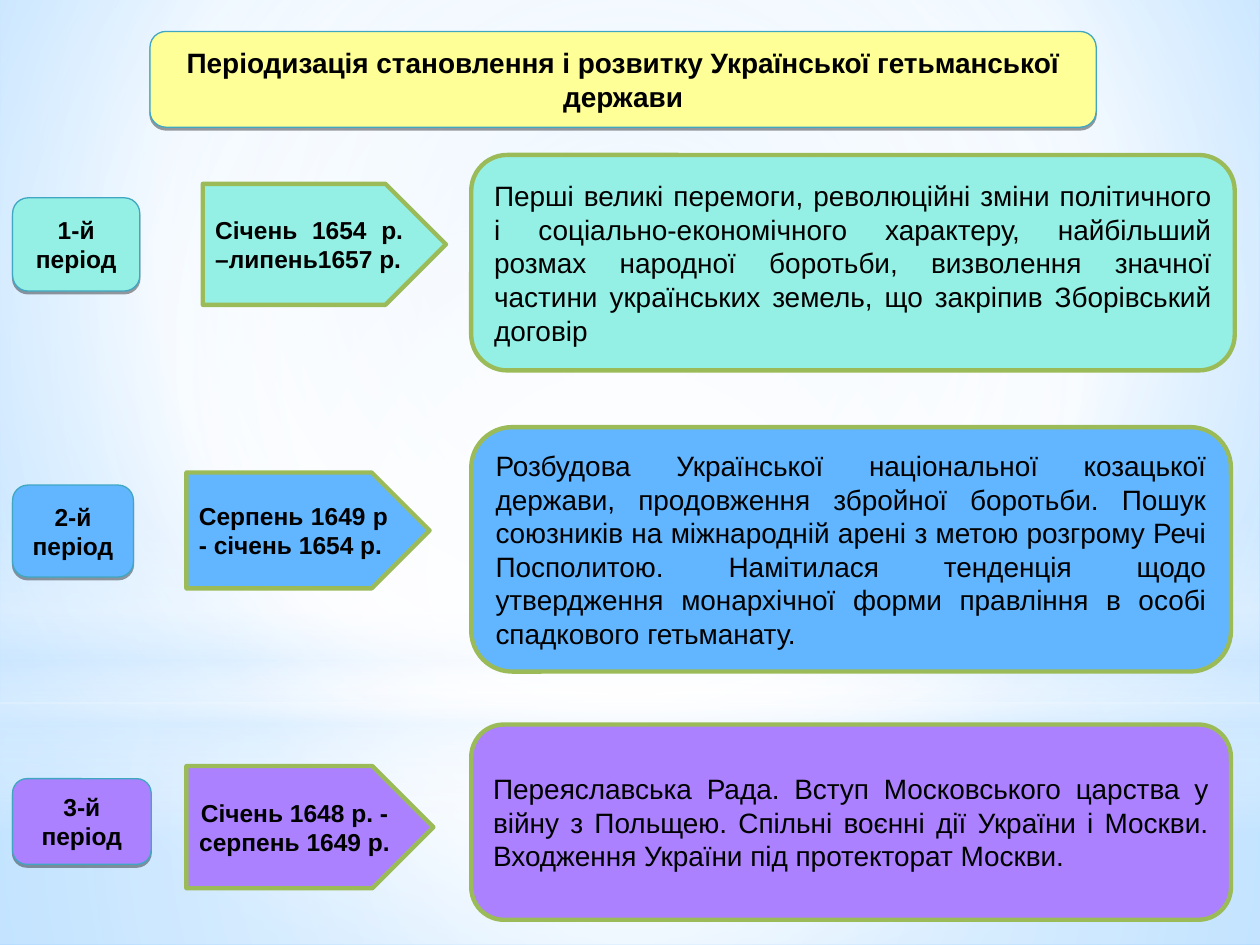
from lxml import etree
from pptx import Presentation
from pptx.dml.color import RGBColor
from pptx.enum.shapes import MSO_SHAPE
from pptx.enum.text import MSO_ANCHOR, PP_ALIGN
from pptx.oxml.ns import qn
from pptx.util import Inches, Pt

RECT, ELLIPSE = MSO_SHAPE.RECTANGLE, MSO_SHAPE.OVAL
ROUNDED, PENTAGON = MSO_SHAPE.ROUNDED_RECTANGLE, MSO_SHAPE.PENTAGON
CENTER, JUSTIFY = PP_ALIGN.CENTER, PP_ALIGN.JUSTIFY
MIDDLE = MSO_ANCHOR.MIDDLE

MINT, BLUE, VIOLET, YELLOW = "94F0E4", "61B6FF", "AB81FF", "FFFF97"
TEAL, OLIVE, BLACK = "40A7C2", "9BBB59", "000000"
WHITE, PALE = "FFFFFF", "D6ECFF"
MIDPOINT = (50, 50, 50, 50)


def color(hex_text):
    return RGBColor.from_string(hex_text)


def add_xml(parent, tag, **attributes):
    return etree.SubElement(parent, qn(tag), {k: str(v) for k, v in attributes.items()})


def add_xml_color(parent, hex_text, opacity):
    add_xml(add_xml(parent, "a:srgbClr", val=hex_text), "a:alpha", val=opacity * 1000)


def set_gradient(element, stops, focus=None):
    """Turn the first solid fill into a circular gradient, or a vertical one without focus."""
    solid = element.find(".//" + qn("a:solidFill"))
    gradient = etree.Element(qn("a:gradFill"), rotWithShape="1")
    stop_list = add_xml(gradient, "a:gsLst")
    for position, hex_text, opacity in stops:
        add_xml_color(add_xml(stop_list, "a:gs", pos=position * 1000), hex_text, opacity)
    if focus:
        circle = add_xml(gradient, "a:path", path="circle")
        sides = {side: share * 1000 for side, share in zip("ltrb", focus)}
        add_xml(circle, "a:fillToRect", **sides)
    else:
        add_xml(gradient, "a:lin", ang=90 * 60000, scaled=0)
    solid.getparent().replace(solid, gradient)


class PeriodSlide:
    font = "Arial"

    def __init__(self, slide):
        self.slide = slide

    def background(self, stops, focus):
        self.slide.background.fill.solid()
        set_gradient(self.slide.element, stops, focus)

    def shape(self, kind, box, fill):
        shape = self.slide.shapes.add_shape(kind, *map(Inches, box))
        shape.shadow.inherit = False
        shape.fill.solid()
        shape.fill.fore_color.rgb = color(fill)
        shape.line.fill.background()
        return shape

    def glow(self, kind, box, stops, focus=None):
        set_gradient(self.shape(kind, box, WHITE).element, stops, focus)

    def panel(self, kind, box, fill, line, width, paragraphs, size, bold, align):
        panel = self.shape(kind, box, fill)
        panel.line.color.rgb = color(line)
        panel.line.width = Pt(width)
        frame = panel.text_frame
        frame.word_wrap = True
        frame.vertical_anchor = MIDDLE
        for index, text in enumerate(paragraphs):
            paragraph = frame.add_paragraph() if index else frame.paragraphs[0]
            paragraph.alignment = align
            run = paragraph.add_run()
            run.text = text
            run.font.name = self.font
            run.font.size = Pt(size)
            run.font.bold = bold
            run.font.color.rgb = color(BLACK)
        return panel

    def label(self, box, fill, paragraphs, size=14):
        """Bold rounded label with a hard shadow below it."""
        label = self.panel(ROUNDED, box, fill, TEAL, 0.75, paragraphs, size, True, CENTER)
        effects = label.element.spPr.find(qn("a:effectLst"))
        shadow = add_xml(effects, "a:outerShdw", blurRad=0, dist=Pt(1.6),
                         dir=90 * 60000, rotWithShape=0)
        add_xml_color(shadow, BLACK, 38)

    def dates(self, box, fill, text, align):
        self.panel(PENTAGON, box, fill, OLIVE, 2.5, [text], 14, True, align)

    def description(self, box, fill, text):
        self.panel(ROUNDED, box, fill, OLIVE, 2.5, [text], 16, False, JUSTIFY)


PERIODS = [
    (MINT,
     (0.1, 1.57, 1.01, 0.74), ["1-й", "період"],
     (1.61, 1.46, 1.93, 0.96), "Січень 1654 р. –липень1657 р.", JUSTIFY,
     (3.74, 1.23, 6.06, 1.71),
     "Перші великі перемоги, революційні зміни політичного і соціально-економічного "
     "характеру, найбільший розмах народної боротьби, визволення значної частини "
     "українських земель, що закріпив Зборівський договір"),
    (BLUE,
     (0.1, 3.85, 0.96, 0.73), ["2-й період"],
     (1.48, 3.75, 1.93, 0.92), "Серпень 1649 р - січень 1654 р.", JUSTIFY,
     (3.74, 3.39, 6.03, 1.94),
     "Розбудова Української національної козацької держави, продовження збройної "
     "боротьби. Пошук союзників на міжнародній арені з метою розгрому Речі Посполитою. "
     "Намітилася тенденція щодо утвердження монархічної форми правління в особі "
     "спадкового гетьманату."),
    (VIOLET,
     (0.1, 6.18, 1.1, 0.68), ["3-й період"],
     (1.48, 6.08, 1.96, 0.97), "Січень 1648 р. - серпень 1649 р.", CENTER,
     (3.74, 5.75, 6.03, 1.55),
     "Переяславська Рада. Вступ Московського царства у війну з Польщею. Спільні воєнні "
     "дії України і Москви. Входження України під протекторат Москви."),
]


def main():
    presentation = Presentation()
    presentation.slide_width, presentation.slide_height = Inches(10), Inches(7.5)
    page = PeriodSlide(presentation.slides.add_slide(presentation.slide_layouts[6]))

    page.background([(0, "C2E3FF", 100), (60, WHITE, 100), (100, "79C1FF", 100)],
                    (20, 10, 20, 60))
    page.glow(RECT, (0, 5.58, 10, 1.92),
              [(0, WHITE, 91), (37, WHITE, 76), (100, PALE, 79)], MIDPOINT)
    page.glow(RECT, (0, 0, 10, 5.58),
              [(0, WHITE, 89), (48, WHITE, 62), (100, PALE, 79)], MIDPOINT)
    page.glow(RECT, (0, 4.12, 10, 2.5),
              [(0, WHITE, 0), (29, WHITE, 30), (45, PALE, 40),
               (55, WHITE, 26), (65, PALE, 60), (100, WHITE, 0)])
    page.glow(ELLIPSE, (0, 1.75, 10, 5.58), [(0, WHITE, 100), (56, WHITE, 0)], MIDPOINT)

    page.label((1.19, 0.25, 7.51, 0.76), YELLOW,
               ["Періодизація становлення і розвитку Української гетьманської держави"], 16)
    for fill, name_box, name, dates_box, dates, align, story_box, story in PERIODS:
        page.label(name_box, fill, name)
        page.dates(dates_box, fill, dates, align)
        page.description(story_box, fill, story)

    presentation.save("out.pptx")


if __name__ == "__main__":
    main()
